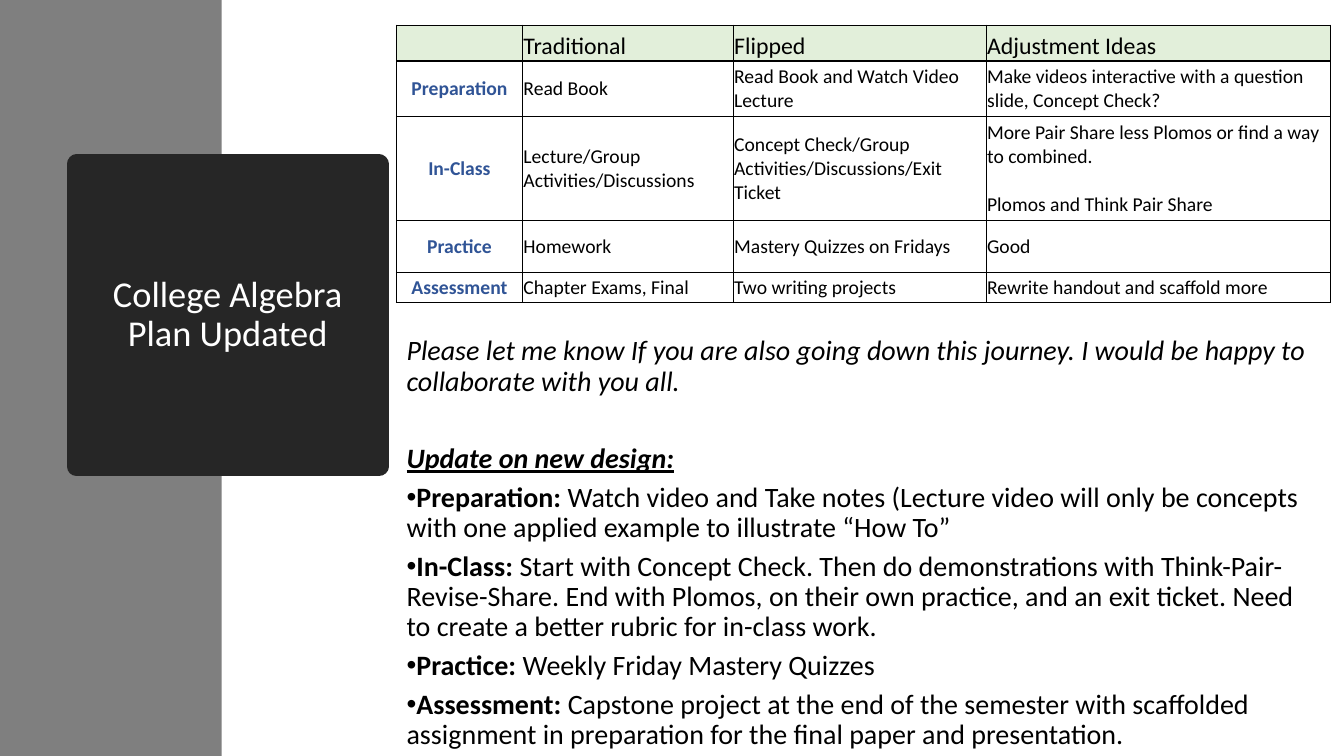
from dataclasses import dataclass

from lxml import etree
from pptx import Presentation
from pptx.dml.color import RGBColor
from pptx.enum.shapes import MSO_SHAPE
from pptx.enum.text import MSO_ANCHOR, MSO_AUTO_SIZE, PP_ALIGN
from pptx.oxml.ns import qn
from pptx.util import Pt

RECTANGLE = MSO_SHAPE.RECTANGLE
MIDDLE, BOTTOM, TOP = MSO_ANCHOR.MIDDLE, MSO_ANCHOR.BOTTOM, MSO_ANCHOR.TOP
CENTER, LEFT = PP_ALIGN.CENTER, PP_ALIGN.LEFT
NO_AUTOFIT = MSO_AUTO_SIZE.NONE

FONT = "Calibri"
COLORS = {
    "sidebar": "7F7F7F",
    "title_box": "262626",
    "title_text": "FFFFFF",
    "text": "000000",
    "header_fill": "E2EFDA",
    "row_label": "305496",
    "border": "000000",
}
PAGE_WIDTH, PAGE_HEIGHT = 960, 540
CONTENT_LEFT, CONTENT_WIDTH = 283.2, 667.4
COLUMN_WIDTHS = [90, 150.5, 180.7, 246.2]
ROW_HEIGHTS = [25.7, 39.3, 74.2, 37.4, 21.6]
RULE_WIDTHS = [1, 1.5, 0.5, 0.5, 0.5, 1]  # horizontal rules, top to bottom
SIDE_WIDTH = 1
PLAN = [
    ["", "Traditional", "Flipped", "Adjustment Ideas"],
    ["Preparation", "Read Book", "Read Book and Watch Video Lecture",
     "Make videos interactive with a question slide, Concept Check?"],
    ["In-Class", "Lecture/Group Activities/Discussions",
     "Concept Check/Group Activities/Discussions/Exit Ticket",
     "More Pair Share less Plomos or find a way to combined.\n"
     "Plomos and Think Pair Share"],
    ["Practice", "Homework", "Mastery Quizzes on Fridays", "Good"],
    ["Assessment", "Chapter Exams, Final", "Two writing projects",
     "Rewrite handout and scaffold more"],
]


@dataclass
class Note:
    text: str
    label: str = ""
    heading: bool = False
    space_after: float = 6


NOTES = [
    Note("Please let me know If you are also going down this journey. "
         "I would be happy to collaborate with you all.", space_after=34),
    Note("Update on new design:", heading=True),
    Note("Watch video and Take notes (Lecture video will only be concepts with "
         "one applied example to illustrate “How To”", "Preparation: "),
    Note("Start with Concept Check. Then do demonstrations with "
         "Think-Pair-Revise-Share. End with Plomos, on their own practice, and an "
         "exit ticket. Need to create a better rubric for in-class work.",
         "In-Class: "),
    Note("Weekly Friday Mastery Quizzes", "Practice: "),
    Note("Capstone project at the end of the semester with scaffolded assignment "
         "in preparation for the final paper and presentation.", "Assessment: "),
]


def color(name: str) -> RGBColor:
    return RGBColor.from_string(COLORS[name])


def set_font(para, size: float, color_name: str) -> None:
    para.font.name = FONT
    para.font.size = Pt(size)
    para.font.color.rgb = color(color_name)


def place(box, left: float, top: float, width: float, height: float) -> None:
    box.left, box.top = Pt(left), Pt(top)
    box.width, box.height = Pt(width), Pt(height)


def format_title(title) -> None:
    place(title, 54.7, 117.2, 216, 216)
    title.fill.solid()
    title.fill.fore_color.rgb = color("title_box")
    title.line.color.rgb = color("title_box")
    title.line.width = Pt(13.75)
    frame = title.text_frame
    frame.text = "College Algebra Plan Updated"
    frame.auto_size = NO_AUTOFIT
    frame.word_wrap = True
    frame.vertical_anchor = MIDDLE
    para = frame.paragraphs[0]
    para.alignment = CENTER
    para.line_spacing = 0.9
    set_font(para, 26, "title_text")


def add_sidebar(page) -> None:
    """Draw the grey band behind the title."""
    sidebar = page.shapes.add_shape(RECTANGLE, 0, 0, Pt(158.4), Pt(PAGE_HEIGHT))
    sidebar.shadow.inherit = False
    sidebar.fill.solid()
    sidebar.fill.fore_color.rgb = color("sidebar")
    sidebar.line.fill.background()
    page.shapes.title.element.addprevious(sidebar.element)


def set_bullet(para, bulleted: bool) -> None:
    """Hang the bullet at the margin, or remove the inherited one."""
    properties = para._p.get_or_add_pPr()
    properties.set("marL", "0")
    properties.set("indent", str(-Pt(18) if bulleted else 0))
    if bulleted:
        etree.SubElement(properties, qn("a:buChar")).set("char", "•")
    else:
        etree.SubElement(properties, qn("a:buNone"))


def write_notes(body) -> None:
    place(body, CONTENT_LEFT, 236.9, CONTENT_WIDTH, 293.8)
    frame = body.text_frame
    frame.auto_size = NO_AUTOFIT
    frame.word_wrap = True
    frame.vertical_anchor = TOP
    for index, note in enumerate(NOTES):
        para = frame.add_paragraph() if index else frame.paragraphs[0]
        para.line_spacing = 0.9
        para.space_before = Pt(0)
        para.space_after = Pt(note.space_after)
        set_bullet(para, bool(note.label))
        set_font(para, 20, "text")
        if note.label:
            span = para.add_run()
            span.text = note.label
            span.font.bold = True
        else:
            para.font.italic = True
        if note.heading:
            para.font.bold = para.font.underline = True
        para.add_run().text = note.text


def set_borders(cell, top: float, bottom: float) -> None:
    properties = cell._tc.get_or_add_tcPr()
    widths = {"L": SIDE_WIDTH, "R": SIDE_WIDTH, "T": top, "B": bottom}
    for side, width in widths.items():
        line = etree.SubElement(properties, qn(f"a:ln{side}"), w=str(Pt(width)))
        fill = etree.SubElement(line, qn("a:solidFill"))
        etree.SubElement(fill, qn("a:srgbClr"), val=COLORS["border"])


def fill_cell(cell, text: str, is_header: bool, is_label: bool) -> None:
    if is_header:
        cell.fill.solid()
        cell.fill.fore_color.rgb = color("header_fill")
    else:
        cell.fill.background()
    cell.vertical_anchor = BOTTOM if is_header else MIDDLE
    cell.margin_left = cell.margin_right = cell.margin_top = Pt(0.72)
    cell.margin_bottom = Pt(0)
    cell.text = text
    for index, para in enumerate(cell.text_frame.paragraphs):
        para.alignment = CENTER if is_label else LEFT
        para.space_before = Pt(17 if index else 0)
        set_font(para, 17 if is_header else 14, "row_label" if is_label else "text")
        para.font.bold = is_label


def add_plan_table(page) -> None:
    frame = page.shapes.add_table(
        len(PLAN), len(COLUMN_WIDTHS), Pt(CONTENT_LEFT), Pt(18),
        Pt(CONTENT_WIDTH), Pt(sum(ROW_HEIGHTS)))
    table = frame.table
    table.first_row = table.horz_banding = False
    for column, width in zip(table.columns, COLUMN_WIDTHS):
        column.width = Pt(width)
    for r, texts in enumerate(PLAN):
        table.rows[r].height = Pt(ROW_HEIGHTS[r])
        for c, text in enumerate(texts):
            cell = table.cell(r, c)
            set_borders(cell, RULE_WIDTHS[r], RULE_WIDTHS[r + 1])
            fill_cell(cell, text, is_header=r == 0, is_label=r > 0 and c == 0)


def main() -> None:
    deck = Presentation()
    deck.slide_width, deck.slide_height = Pt(PAGE_WIDTH), Pt(PAGE_HEIGHT)
    page = deck.slides.add_slide(deck.slide_layouts[1])
    add_sidebar(page)
    format_title(page.shapes.title)
    write_notes(page.placeholders[1])
    add_plan_table(page)
    deck.save("out.pptx")


if __name__ == "__main__":
    main()
